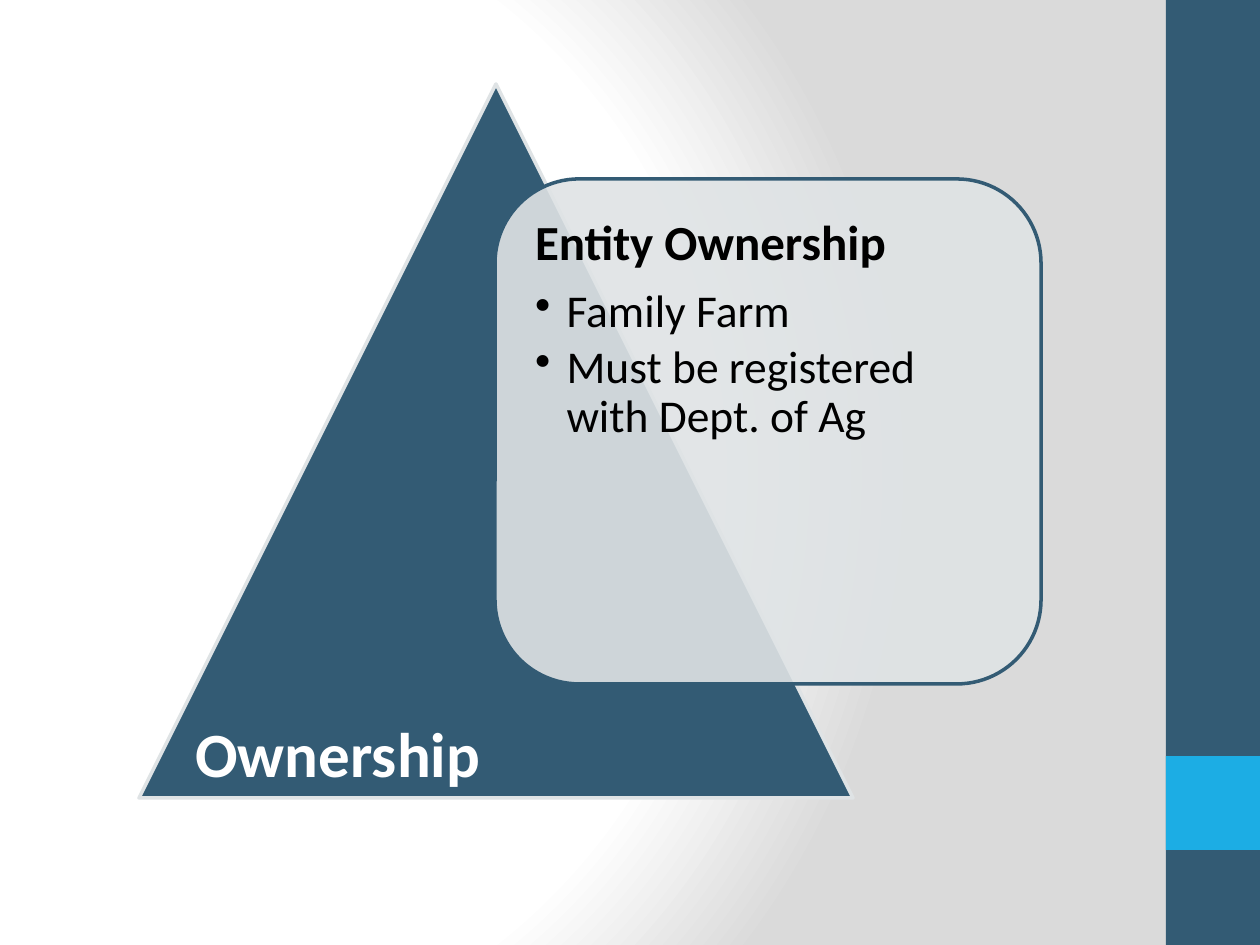
from lxml import etree
from pptx import Presentation
from pptx import util as u
from pptx.dml.color import RGBColor
from pptx.enum import shapes, text
from pptx.oxml import parse_xml
from pptx.oxml.ns import nsdecls, qn

PX = 914400 / 126
FONT = "Calibri"
NAVY = RGBColor(0x33, 0x5B, 0x74)
CYAN = RGBColor(0x1C, 0xAD, 0xE4)
MIST = RGBColor(0xDF, 0xE3, 0xE5)
SILVER = RGBColor(0xDA, 0xDA, 0xDA)
WHITE = RGBColor(0xFF, 0xFF, 0xFF)
BLACK = RGBColor(0, 0, 0)


def px(length):
    return u.Emu(round(length * PX))


def paint_background(slide):
    slide.background.fill.gradient()
    default = slide.element.find(".//" + qn("a:gradFill"))
    stops = "".join(
        f'<a:gs pos="{percent * 1000}"><a:srgbClr val="{color}"/></a:gs>'
        for percent, color in ((0, WHITE), (75, WHITE), (100, SILVER))
    )
    glow = parse_xml(
        f'<a:gradFill {nsdecls("a")} rotWithShape="1"><a:gsLst>{stops}</a:gsLst>'
        '<a:path path="circle"><a:fillToRect l="20000" t="50000" r="100000" b="50000"/>'
        "</a:path></a:gradFill>"
    )
    default.getparent().replace(default, glow)


def add_panel(slide, kind, box, fill, line=None, opacity=100):
    panel = slide.shapes.add_shape(kind, *map(px, box))
    panel.shadow.inherit = False
    panel.fill.solid()
    panel.fill.fore_color.rgb = fill
    if opacity < 100:
        color = panel.fill._xPr.find(qn("a:solidFill")).find(qn("a:srgbClr"))
        etree.SubElement(color, qn("a:alpha"), val=str(opacity * 1000))
    if line is None:
        panel.line.fill.background()
    else:
        panel.line.color.rgb = line
        panel.line.width = u.Pt(2)


def add_text_frame(slide, box, inset=None, grow=False):
    frame = slide.shapes.add_textbox(*map(px, box)).text_frame
    frame.word_wrap = True
    if grow:
        frame.auto_size = text.MSO_AUTO_SIZE.SHAPE_TO_FIT_TEXT
    if inset is not None:
        frame.margin_left = frame.margin_right = px(inset)
        frame.margin_top = frame.margin_bottom = px(inset)
    return frame


def write(frame, words, size, color=BLACK, bold=False, bullet=False, spacing=1.0, after=0):
    paragraph = frame.paragraphs[0] if not frame.text else frame.add_paragraph()
    if bullet:
        paragraph.level = 1
        properties = paragraph._p.get_or_add_pPr()
        properties.set("marL", str(u.Inches(0.25)))
        properties.set("indent", str(-u.Inches(0.25)))
        etree.SubElement(properties, qn("a:buChar"), char="•")
    paragraph.line_spacing = spacing
    paragraph.space_after = u.Pt(after)
    run = paragraph.add_run()
    run.text = words
    run.font.name = FONT
    run.font.size = u.Pt(size)
    run.font.bold = bold
    run.font.color.rgb = color


def main():
    presentation = Presentation()
    presentation.slide_width, presentation.slide_height = px(1260), px(945)
    slide = presentation.slides.add_slide(presentation.slide_layouts[6])
    paint_background(slide)

    kinds = shapes.MSO_SHAPE
    add_panel(slide, kinds.RECTANGLE, (1166, 0, 94, 945), NAVY)
    add_panel(slide, kinds.RECTANGLE, (1166, 756, 94, 94), CYAN)
    add_panel(slide, kinds.ISOSCELES_TRIANGLE, (139, 84, 714, 714), NAVY, line=MIST)
    add_panel(slide, kinds.ROUNDED_RECTANGLE, (495, 179, 546, 505), MIST, line=NAVY, opacity=90)

    entity = add_text_frame(slide, (520, 203, 495, 455), inset=15)
    write(entity, "Entity Ownership", 28, bold=True, spacing=0.9, after=10)
    for point in ("Family Farm", "Must be registered with Dept. of Ag"):
        write(entity, point, 26, bullet=True, spacing=0.9, after=4)

    ownership = add_text_frame(slide, (183, 708, 388, 89), grow=True)
    write(ownership, "Ownership", 36, color=WHITE, bold=True)

    presentation.save("out.pptx")


if __name__ == "__main__":
    main()
